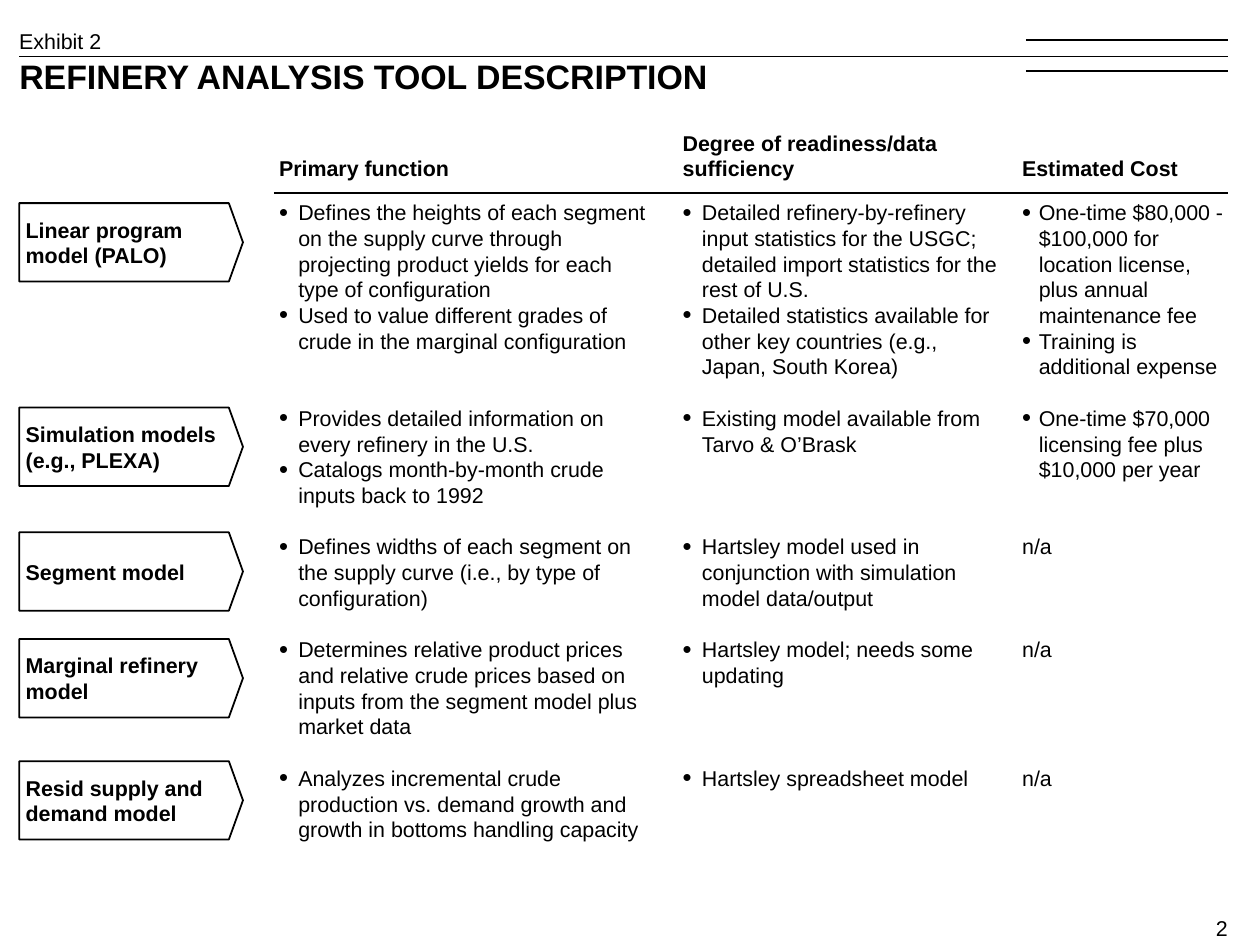
from lxml.etree import SubElement
from pptx import Presentation
from pptx.dml.color import RGBColor
from pptx.enum.shapes import MSO_CONNECTOR, MSO_SHAPE
from pptx.enum.text import MSO_ANCHOR, MSO_AUTO_SIZE, PP_ALIGN
from pptx.oxml.ns import qn
from pptx.util import Inches, Pt

BLACK = RGBColor(0x00, 0x00, 0x00)
WHITE = RGBColor(0xFF, 0xFF, 0xFF)
FONT = "Arial"
TEXT_SIZE = 12
LINE_RATIO = 1.2
LEFT, RIGHT = 0.15, 9.55


def set_text(shape, texts, size=TEXT_SIZE, bold=False,
             anchor=MSO_ANCHOR.TOP, align=PP_ALIGN.LEFT):
    """Write one paragraph per text, with common formatting."""
    frame = shape.text_frame
    frame_format = {"margin_left": 0, "margin_right": 0, "margin_top": 0,
                    "margin_bottom": 0, "word_wrap": True,
                    "auto_size": MSO_AUTO_SIZE.NONE, "vertical_anchor": anchor}
    for name, value in frame_format.items():
        setattr(frame, name, value)
    frame.text = "\n".join(texts)
    paragraph_format = {"alignment": align, "line_spacing": Pt(size * LINE_RATIO),
                        "space_before": Pt(0), "space_after": Pt(0)}
    font_format = {"name": FONT, "size": Pt(size), "bold": bold}
    for paragraph in frame.paragraphs:
        for name, value in paragraph_format.items():
            setattr(paragraph, name, value)
        font = paragraph.runs[0].font
        for name, value in font_format.items():
            setattr(font, name, value)
        font.color.rgb = BLACK


def place(shape, left, top, width, height):
    shape.left, shape.top = Inches(left), Inches(top)
    shape.width, shape.height = Inches(width), Inches(height)


presentation = Presentation()
presentation.slide_width = Inches(9.8)
presentation.slide_height = Inches(7.35)
slide = presentation.slides.add_slide(presentation.slide_layouts[4])
placeholders = {item.placeholder_format.idx: item for item in slide.placeholders}

# Title
title = slide.shapes.title
place(title, LEFT, 0.43, 9.4, 0.32)
set_text(title, ["REFINERY ANALYSIS TOOL DESCRIPTION"], size=19, bold=True)

# Rules: two short ones at the corner, one above the title, one under the headings
for start, y in [(7.98, 0.31), (7.98, 0.55), (LEFT, 0.44), (2.13, 1.5)]:
    rule = slide.shapes.add_connector(MSO_CONNECTOR.STRAIGHT, Inches(start), Inches(y),
                                      Inches(RIGHT), Inches(y))
    rule.line.color.rgb = BLACK
    rule.line.width = Pt(1)
    SubElement(rule.element.spPr, qn("a:effectLst"))

# Exhibit label and page number
for text, left, top, width, align in [
    ("Exhibit 2", LEFT, 0.22, 1, PP_ALIGN.LEFT),
    ("2", 9.35, 7.12, 0.2, PP_ALIGN.RIGHT),
]:
    label = slide.shapes.add_textbox(Inches(left), Inches(top), Inches(width), Inches(0.2))
    set_text(label, [text], align=align)

# Columns: heading, placeholder index, left, width, indent,
# then each entry with the number of lines left free above it
columns = [
    ("Primary function", 2, 2.17, 2.91, 0.15, [
        ("Defines the heights of each segment on the supply curve through "
         "projecting product yields for each type of configuration", 0),
        ("Used to value different grades of crude in the marginal configuration", 0),
        ("Provides detailed information on every refinery in the U.S.", 2),
        ("Catalogs month-by-month crude inputs back to 1992", 0),
        ("Defines widths of each segment on the supply curve "
         "(i.e., by type of configuration)", 1),
        ("Determines relative product prices and relative crude prices based on "
         "inputs from the segment model plus market data", 1),
        ("Analyzes incremental crude production vs. demand growth and growth in "
         "bottoms handling capacity", 1),
    ]),
    ("Degree of readiness/data sufficiency", 4, 5.31, 2.46, 0.15, [
        ("Detailed refinery-by-refinery input statistics for the USGC; "
         "detailed import statistics for the rest of U.S.", 0),
        ("Detailed statistics available for other key countries "
         "(e.g., Japan, South Korea)", 0),
        ("Existing model available from Tarvo & O’Brask", 1),
        ("Hartsley model used in conjunction with simulation model data/output", 3),
        ("Hartsley model; needs some updating", 1),
        ("Hartsley spreadsheet model", 3),
    ]),
    ("Estimated Cost", 1, 7.95, 1.6, 0.13, [
        ("One-time $80,000 - $100,000 for location license, "
         "plus annual maintenance fee", 0),
        ("Training is additional expense", 0),
        ("One-time $70,000 licensing fee plus $10,000 per year", 1),
        ("n/a", 2),
        ("n/a", 3),
        ("n/a", 4),
    ]),
]
for heading, index, left, width, indent, entries in columns:
    header = slide.shapes.add_textbox(Inches(left), Inches(1.01), Inches(width), Inches(0.4))
    set_text(header, [heading], bold=True, anchor=MSO_ANCHOR.BOTTOM)

    body = placeholders[index]
    place(body, left, 1.55, width, 5.4)
    set_text(body, [text for text, free_lines in entries])
    for paragraph, (text, free_lines) in zip(body.text_frame.paragraphs, entries):
        paragraph.space_before = Pt(free_lines * TEXT_SIZE * LINE_RATIO)
        properties = paragraph._p.get_or_add_pPr()
        properties.set("marL", str(Inches(indent)))
        properties.set("indent", str(-Inches(indent)))
        if text == "n/a":
            SubElement(properties, qn("a:buNone"))
            continue
        bullet_color = SubElement(properties, qn("a:buClr"))
        SubElement(bullet_color, qn("a:srgbClr"), val=str(BLACK))
        SubElement(properties, qn("a:buSzPct"), val="120000")
        SubElement(properties, qn("a:buFont"), typeface=FONT)
        SubElement(properties, qn("a:buChar"), char="•")

# Row labels in arrow boxes
tools = [
    ("Linear program model (PALO)", 1.58),
    ("Simulation models (e.g., PLEXA)", 3.17),
    ("Segment model", 4.14),
    ("Marginal refinery model", 4.97),
    ("Resid supply and demand model", 5.92),
]
for name, top in tools:
    arrow = slide.shapes.add_shape(MSO_SHAPE.PENTAGON, Inches(LEFT), Inches(top),
                                   Inches(1.74), Inches(0.61))
    arrow.adjustments[0] = 0.18
    arrow.shadow.inherit = False
    arrow.fill.solid()
    arrow.fill.fore_color.rgb = WHITE
    arrow.line.color.rgb = BLACK
    arrow.line.width = Pt(1)
    set_text(arrow, [name], bold=True, anchor=MSO_ANCHOR.MIDDLE)
    arrow.text_frame.margin_left = Inches(0.05)
    arrow.text_frame.margin_right = Inches(0.06)

# Unused placeholder
unused = placeholders[3].element
unused.getparent().remove(unused)

presentation.save("out.pptx")
